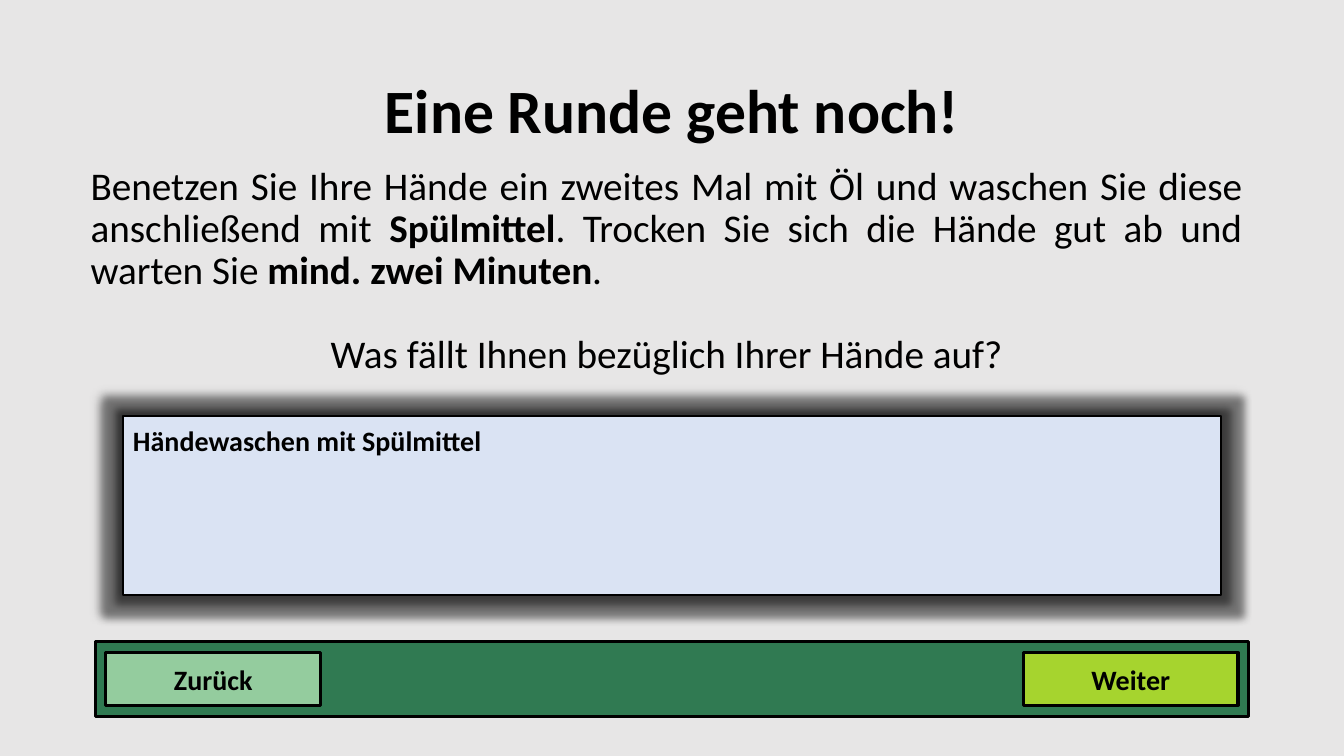
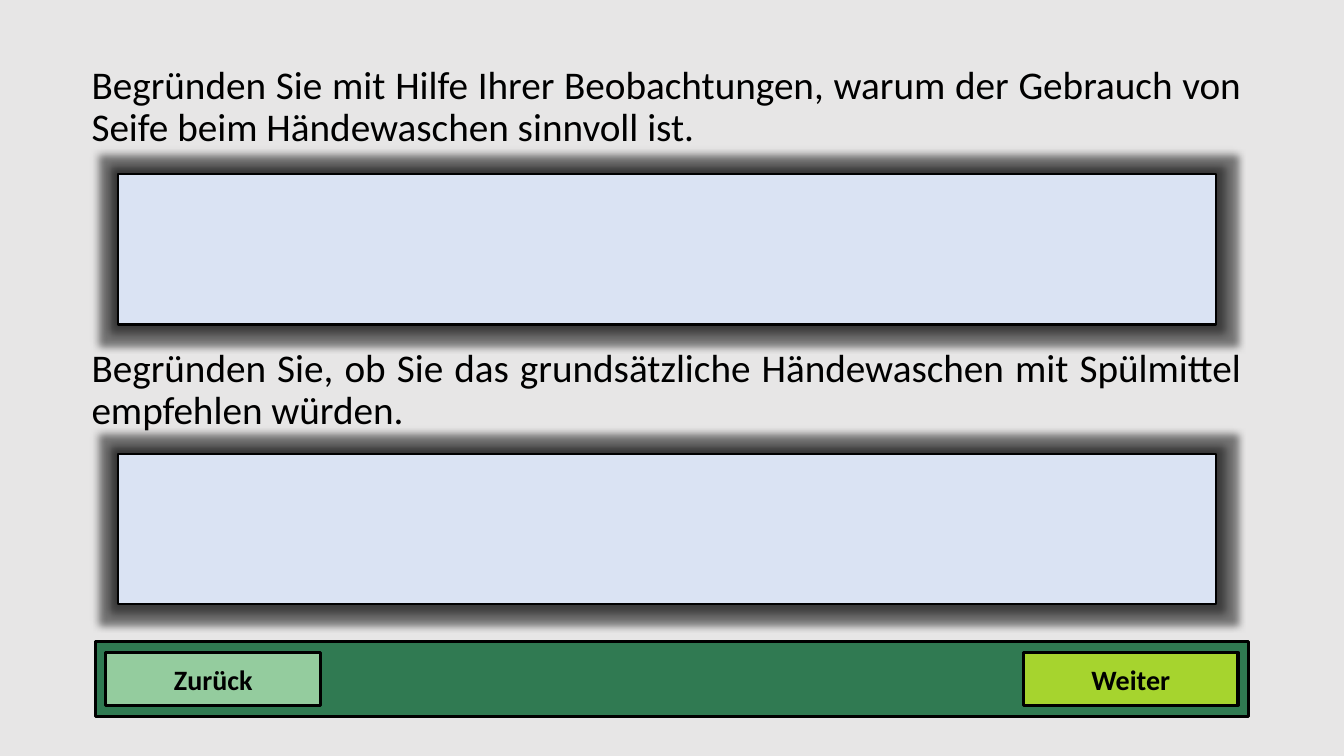
from lxml import etree
from pptx import Presentation
from pptx.dml.color import RGBColor
from pptx.enum.shapes import MSO_SHAPE
from pptx.enum.text import MSO_ANCHOR, PP_ALIGN
from pptx.oxml import parse_xml
from pptx.util import Inches, Pt

RECTANGLE = MSO_SHAPE.RECTANGLE
TOP, MIDDLE = MSO_ANCHOR.TOP, MSO_ANCHOR.MIDDLE
LEFT, CENTER, JUSTIFY = PP_ALIGN.LEFT, PP_ALIGN.CENTER, PP_ALIGN.JUSTIFY

FONT = "Calibri"
BLACK, BACKGROUND, ANSWER_BLUE = "000000", "E7E6E6", "DAE3F3"
BAND_GREEN, BACK_GREEN, NEXT_GREEN = "307A52", "94CC9E", "A6D42E"

TITLE = {"size": 44, "bold": True, "align": CENTER, "anchor": MIDDLE, "spacing": 0.9}
BODY = {"size": 28, "align": JUSTIFY, "spacing": 0.9}
QUESTION = {**BODY, "align": CENTER}
BUTTON = {"size": 20, "bold": True, "align": CENTER, "anchor": MIDDLE}
ANSWER_LABEL = {"size": 20, "bold": True, "align": LEFT}

# Boxes are (left, top, width, height) in inches; runs are (text, bold).
BAND = (0.95, 6.36, 11.43, 0.75)
BUTTON_SIZE = (2.13, 0.52)
BUTTON_INSET = 0.1
ANSWER_WIDTH = 10.89

SLIDES = [
    {
        "texts": [
            ((0.92, 0.4, 11.5, 1.45), TITLE, [("Eine Runde geht noch!", True)]),
            ((0.8, 1.6, 11.62, 1.5), BODY, [
                ("Benetzen Sie Ihre Hände ein zweites Mal mit Öl und waschen Sie diese "
                 "anschließend mit ", False),
                ("Spülmittel", True),
                (". Trocken Sie sich die Hände gut ab und warten Sie ", False),
                ("mind. zwei Minuten", True),
                (".", False),
            ]),
            ((0.8, 3.27, 11.62, 0.6), QUESTION,
             [("Was fällt Ihnen bezüglich Ihrer Hände auf?", False)]),
        ],
        "answers": [(1.22, 4.13, 1.77, "Händewaschen mit Spülmittel")],
    },
    {
        "texts": [
            ((0.81, 0.6, 11.6, 1), BODY,
             [("Begründen Sie mit Hilfe Ihrer Beobachtungen, warum der Gebrauch von "
               "Seife beim Händewaschen sinnvoll ist.", False)]),
            ((0.81, 3.41, 11.6, 1), BODY,
             [("Begründen Sie, ob Sie das grundsätzliche Händewaschen mit Spülmittel "
               "empfehlen würden.", False)]),
        ],
        "answers": [(1.17, 1.73, 1.49, None), (1.17, 4.5, 1.49, None)],
    },
]

HALO = """
<a:effectLst xmlns:a="http://schemas.openxmlformats.org/drawingml/2006/main">
  <a:glow rad="139700"><a:srgbClr val="000000"><a:alpha val="40000"/></a:srgbClr></a:glow>
  <a:outerShdw blurRad="50800" dist="38100" dir="13500000" algn="br" rotWithShape="0">
    <a:srgbClr val="000000"><a:alpha val="40000"/></a:srgbClr>
  </a:outerShdw>
</a:effectLst>
"""


def color(value):
    return RGBColor.from_string(value)


def write(shape, runs, style):
    frame = shape.text_frame
    frame.word_wrap = True
    frame.vertical_anchor = style.get("anchor", TOP)
    paragraph = frame.paragraphs[0]
    paragraph.alignment = style["align"]
    paragraph.line_spacing = style.get("spacing", 1.0)
    for text, bold in runs:
        run = paragraph.add_run()
        run.text = text
        run.font.color.rgb = color(BLACK)
        settings = {"name": FONT, "size": Pt(style["size"]), "bold": bold}
        for name, value in settings.items():
            setattr(run.font, name, value)


def add_text(slide, box, style, runs):
    write(slide.shapes.add_textbox(*map(Inches, box)), runs, style)


def add_rectangle(slide, box, fill, line_width, label=None, style=None):
    shape = slide.shapes.add_shape(RECTANGLE, *map(Inches, box))
    shape.shadow.inherit = False
    shape.fill.solid()
    shape.fill.fore_color.rgb = color(fill)
    shape.line.color.rgb = color(BLACK)
    shape.line.width = Pt(line_width)
    if label:
        write(shape, [(label, style["bold"])], style)
    return shape


def add_answer(slide, left, top, height, label):
    """Add an answer field with a soft dark halo."""
    box = (left, top, ANSWER_WIDTH, height)
    shape = add_rectangle(slide, box, ANSWER_BLUE, 1.5, label, ANSWER_LABEL)
    shape.text_frame.margin_top = Inches(0.07)
    properties = shape.fill._xPr
    effects = properties.find("{*}effectLst")
    halo = parse_xml(etree.tostring(etree.fromstring(HALO)))
    properties.replace(effects, halo)


def add_navigation(slide):
    add_rectangle(slide, BAND, BAND_GREEN, 2.25)
    left, top, width, height = BAND
    button_width, button_height = BUTTON_SIZE
    button_top = top + (height - button_height) / 2
    buttons = [
        ("Zurück", left + BUTTON_INSET, BACK_GREEN),
        ("Weiter", left + width - BUTTON_INSET - button_width, NEXT_GREEN),
    ]
    for label, button_left, fill in buttons:
        box = (button_left, button_top, *BUTTON_SIZE)
        add_rectangle(slide, box, fill, 2.25, label, BUTTON)


def main():
    presentation = Presentation()
    presentation.slide_width = Inches(13.33)
    presentation.slide_height = Inches(7.5)
    background = presentation.slide_master.background.fill
    background.solid()
    background.fore_color.rgb = color(BACKGROUND)
    blank_layout = presentation.slide_layouts[6]
    for content in SLIDES:
        slide = presentation.slides.add_slide(blank_layout)
        for box, style, runs in content["texts"]:
            add_text(slide, box, style, runs)
        add_navigation(slide)
        for answer in content["answers"]:
            add_answer(slide, *answer)
    presentation.save("out.pptx")


if __name__ == "__main__":
    main()
